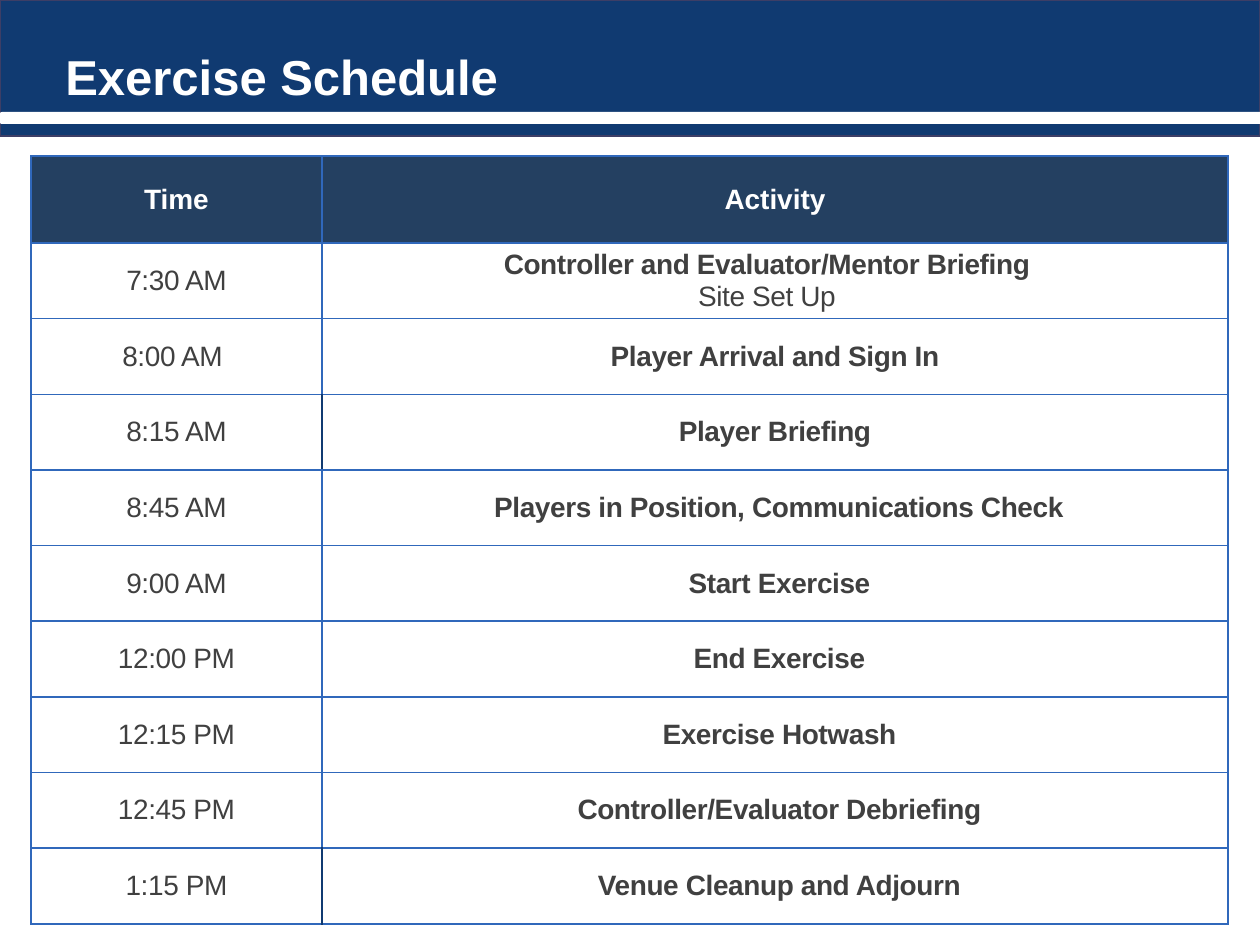
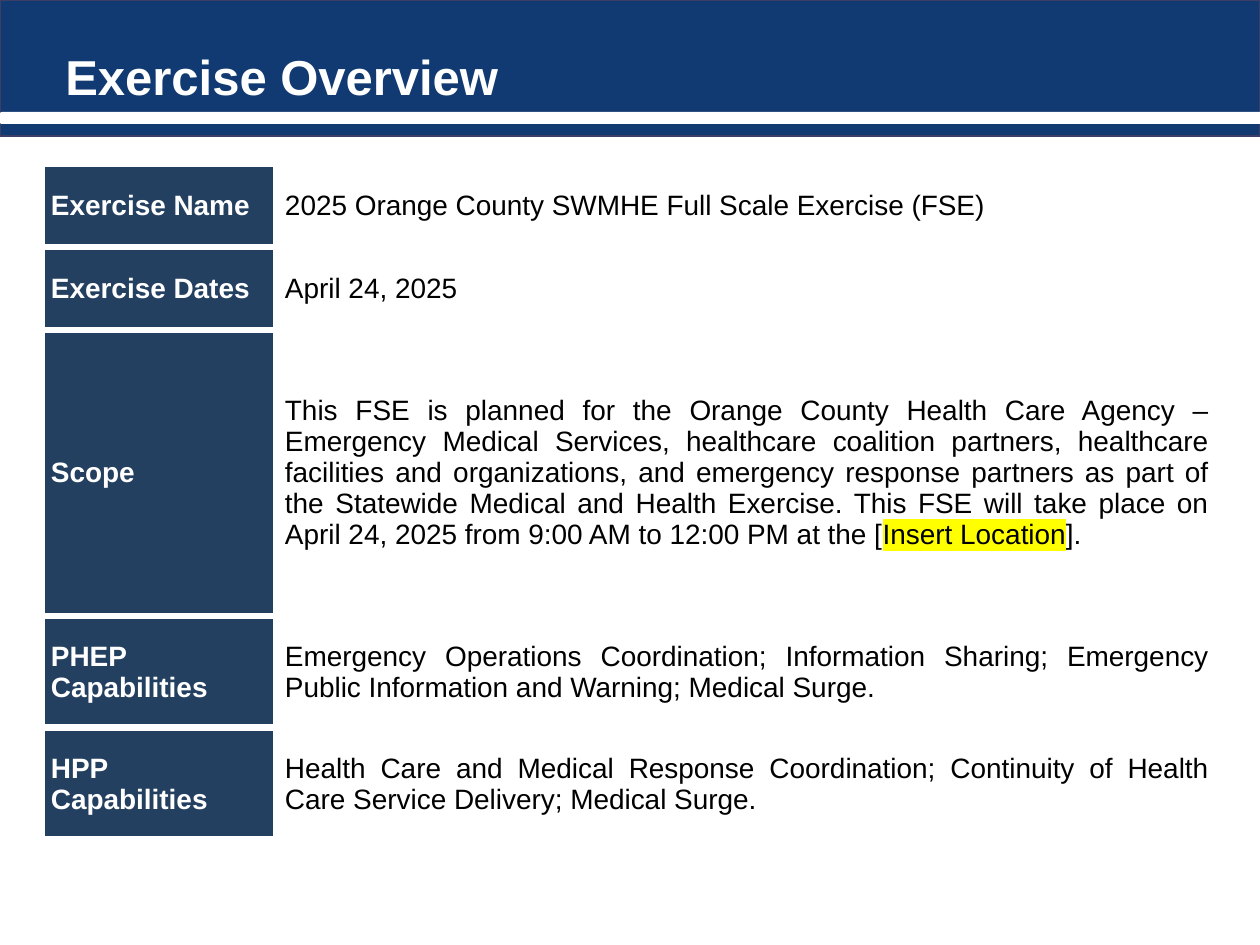
from lxml import etree
from pptx import Presentation
from pptx import util as u
from pptx.dml.color import RGBColor
from pptx.enum import shapes, text
from pptx.oxml.ns import qn

EMU_PER_PX = 914400 / 126
NAVY = RGBColor(0x10, 0x3A, 0x71)
BAND_EDGE = RGBColor(0x3D, 0x3E, 0x66)
HEADING_BLUE = RGBColor(0x24, 0x40, 0x61)
GRID_BLUE = RGBColor(0x30, 0x68, 0xBB)
GREY = RGBColor(0x40, 0x40, 0x40)
YELLOW = RGBColor(0xFF, 0xFF, 0x00)
WHITE = RGBColor(0xFF, 0xFF, 0xFF)
BLACK = RGBColor(0x00, 0x00, 0x00)
FONT = "Arial"
CELL_INSET = 9

SCHEDULE = [
    ("7:30 AM", "Controller and Evaluator/Mentor Briefing"),
    ("8:00 AM", "Player Arrival and Sign In"),
    ("8:15 AM", "Player Briefing"),
    ("8:45 AM", "Players in Position, Communications Check"),
    ("9:00 AM", "Start Exercise"),
    ("12:00 PM", "End Exercise"),
    ("12:15 PM", "Exercise Hotwash"),
    ("12:45 PM", "Controller/Evaluator Debriefing"),
    ("1:15 PM", "Venue Cleanup and Adjourn"),
]
TIME_NUDGES = {"8:00 AM": -8}
ACTIVITY_NUDGES = {SCHEDULE[0][1]: -16, SCHEDULE[3][1]: 8}
ACTIVITY_NUDGES.update({activity: CELL_INSET for _, activity in SCHEDULE[4:]})
NAVY_DIVIDERS = ("8:15 AM", "1:15 PM")

OVERVIEW = [
    ("Exercise Name", 83, ["2025 Orange County SWMHE Full Scale Exercise (FSE)"]),
    ("Exercise Dates", 83, ["April 24, 2025"]),
    ("Scope", 286, [
        "This FSE is planned for the Orange County Health Care Agency – "
        "Emergency Medical Services, healthcare coalition partners, "
        "healthcare facilities and organizations, and emergency response "
        "partners as part of the Statewide Medical and Health Exercise. "
        "This FSE will take place on April 24, 2025 from 9:00 AM to "
        "12:00 PM at the [", "Insert Location", "]."]),
    ("PHEP Capabilities", 112, [
        "Emergency Operations Coordination; Information Sharing; "
        "Emergency Public Information and Warning; Medical Surge."]),
    ("HPP Capabilities", 112, [
        "Health Care and Medical Response Coordination; Continuity of "
        "Health Care Service Delivery; Medical Surge."]),
]


def px(length):
    return u.Emu(round(length * EMU_PER_PX))


def add_run(paragraph, words, color, size=16, bold=False, spacing=0, highlight=None):
    run = paragraph.add_run()
    run.text = words
    run.font.size = u.Pt(size)
    run.font.bold = bold
    run.font.color.rgb = color
    run.font.name = FONT
    properties = run.font._element
    if spacing:
        properties.set("spc", str(spacing))
    if highlight is not None:
        mark = etree.Element(qn("a:highlight"))
        etree.SubElement(mark, qn("a:srgbClr"), val=str(highlight))
        properties.find(qn("a:latin")).addprevious(mark)


def align(paragraph, alignment, before=0, after=0, nudge=0):
    paragraph.alignment = alignment
    paragraph.space_before = u.Pt(before)
    paragraph.space_after = u.Pt(after)
    if nudge:
        side = "marL" if nudge > 0 else "marR"
        paragraph._p.get_or_add_pPr().set(side, str(px(abs(nudge))))


def add_bar(slide, kind, box, fill, edge=None):
    bar = slide.shapes.add_shape(kind, *map(px, box))
    bar.shadow.inherit = False
    bar.fill.solid()
    bar.fill.fore_color.rgb = fill
    if edge is None:
        bar.line.fill.background()
    else:
        bar.line.color.rgb = edge
        bar.line.width = u.Pt(1.5)
    return bar


def add_header(slide, title, box):
    left, top, width, height = box
    add_bar(slide, shapes.MSO_SHAPE.RECTANGLE, box, NAVY, BAND_EDGE)
    add_bar(slide, shapes.MSO_SHAPE.ROUNDED_RECTANGLE,
            (left, top + height - 24, width + 10, 12), WHITE)
    heading = slide.shapes.add_textbox(
        *map(px, (left + 53, top, width - 84, height - 24))).text_frame
    heading.word_wrap = True
    heading.vertical_anchor = text.MSO_ANCHOR.BOTTOM
    add_run(heading.paragraphs[0], title, WHITE, size=28, bold=True)


def style_cell(cell, fill, borders, border_pt):
    cell.vertical_anchor = text.MSO_ANCHOR.MIDDLE
    cell.margin_left = cell.margin_right = px(CELL_INSET)
    cell.margin_top = cell.margin_bottom = 0
    if fill is None:
        cell.fill.background()
    else:
        cell.fill.solid()
        cell.fill.fore_color.rgb = fill
    properties = cell._tc.get_or_add_tcPr()
    for position, (side, color) in enumerate(zip("LRTB", borders)):
        line = etree.Element(qn(f"a:ln{side}"), w=str(u.Pt(border_pt)))
        paint = etree.SubElement(line, qn("a:solidFill"))
        etree.SubElement(paint, qn("a:srgbClr"), val=str(color))
        properties.insert(position, line)
    return cell.text_frame.paragraphs[0]


def add_grid(slide, box, columns, rows):
    grid = slide.shapes.add_table(len(rows), len(columns), *map(px, box)).table
    grid.first_row = grid.horz_banding = False
    for column, width in zip(grid.columns, columns):
        column.width = px(width)
    for row, height in zip(grid.rows, rows):
        row.height = px(height)
    return grid


def add_schedule(slide, box):
    _, _, width, height = box
    time_width, heading_height = 291, 87
    row_height = (height - heading_height) / len(SCHEDULE)
    grid = add_grid(slide, box, (time_width, width - time_width),
                    [heading_height] + [row_height] * len(SCHEDULE))
    center = text.PP_ALIGN.CENTER

    for column, label in enumerate(("Time", "Activity")):
        paragraph = style_cell(grid.cell(0, column), HEADING_BLUE, [GRID_BLUE] * 4, 1)
        align(paragraph, center, before=10)
        add_run(paragraph, label, WHITE, bold=True)

    for row, (time, activity) in enumerate(SCHEDULE, 1):
        divider = NAVY if time in NAVY_DIVIDERS else GRID_BLUE
        paragraph = style_cell(grid.cell(row, 0), None,
                               (GRID_BLUE, divider, GRID_BLUE, GRID_BLUE), 1)
        align(paragraph, center, nudge=TIME_NUDGES.get(time, 0))
        add_run(paragraph, time, GREY, spacing=-20)
        paragraph = style_cell(grid.cell(row, 1), None, (divider,) + (GRID_BLUE,) * 3, 1)
        align(paragraph, center, nudge=ACTIVITY_NUDGES.get(activity, 0))
        add_run(paragraph, activity, GREY, bold=True, spacing=-20)

    setup = grid.cell(1, 1).text_frame.add_paragraph()
    align(setup, center)
    add_run(setup, "Site Set Up", GREY, spacing=-20)


def add_overview(slide, box):
    label_width = 234
    grid = add_grid(slide, box, (label_width, box[2] - label_width),
                    [height for _, height, _ in OVERVIEW])
    for row, (label, _, details) in enumerate(OVERVIEW):
        paragraph = style_cell(grid.cell(row, 0), HEADING_BLUE, [WHITE] * 4, 4.5)
        align(paragraph, text.PP_ALIGN.LEFT, before=6, after=6)
        add_run(paragraph, label, WHITE, bold=True)
        paragraph = style_cell(grid.cell(row, 1), None, [WHITE] * 4, 4.5)
        align(paragraph, text.PP_ALIGN.JUSTIFY, after=8 if label == "Scope" else 0)
        for words in details:
            add_run(paragraph, words, BLACK,
                    highlight=YELLOW if words == "Insert Location" else None)


def main():
    deck = Presentation()
    deck.slide_width, deck.slide_height = px(1260), px(945)
    pages = [
        ("Exercise Schedule", add_schedule, (31, 156, 1197, 768)),
        ("Exercise Overview", add_overview, (42, 164, 1176, 676)),
    ]
    for title, add_body, box in pages:
        slide = deck.slides.add_slide(deck.slide_layouts[6])
        add_header(slide, title, (0, 0, 1260, 136))
        add_body(slide, box)
    deck.save("out.pptx")


if __name__ == "__main__":
    main()
